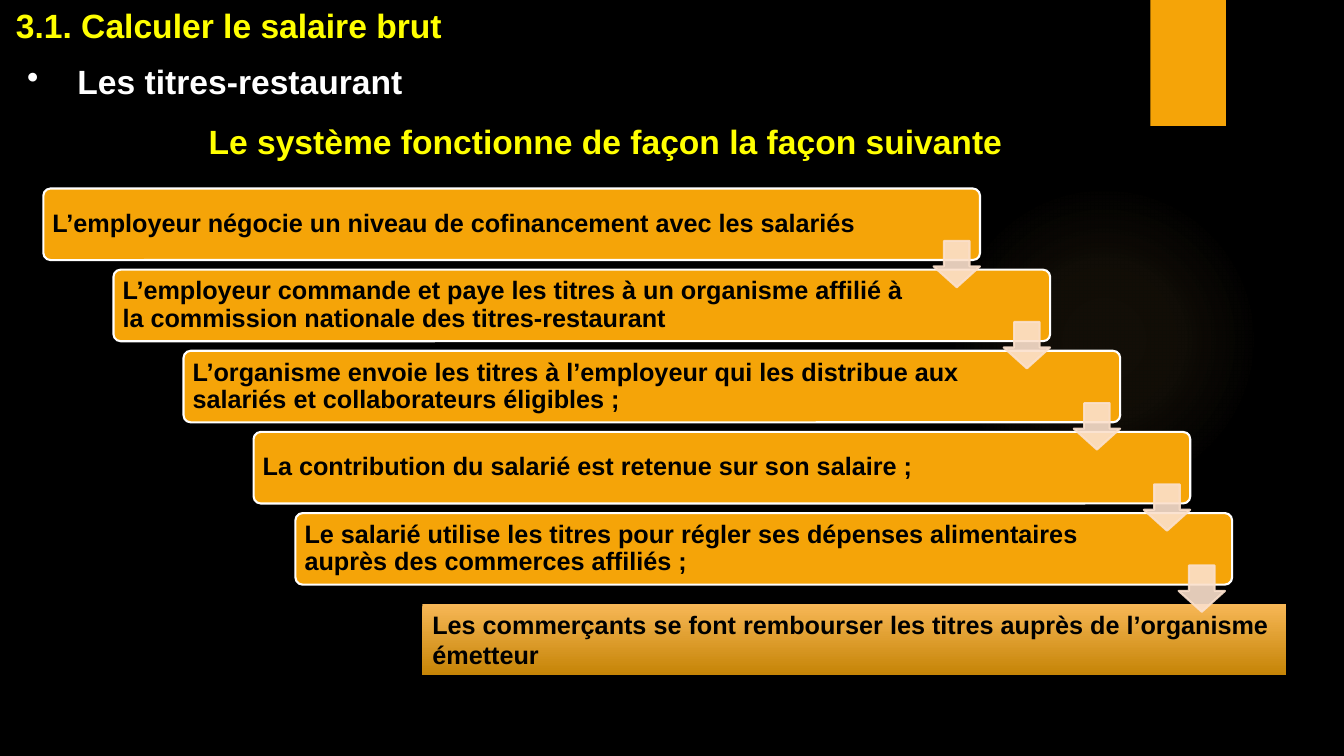
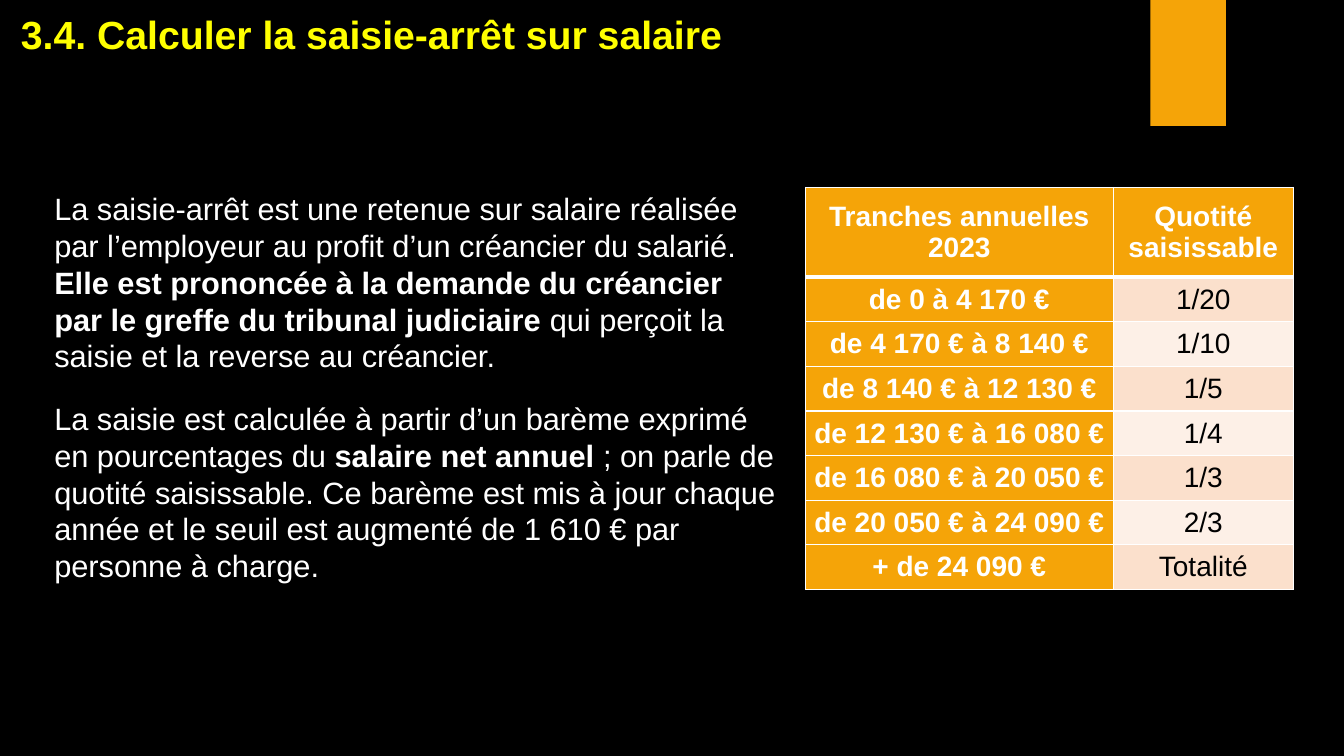
"""Build two payroll slides: meal voucher steps and the wage garnishment scale."""

from pptx import Presentation
from pptx.dml.color import RGBColor
from pptx.enum.shapes import MSO_SHAPE as Shape
from pptx.enum.text import MSO_ANCHOR as Anchor, PP_ALIGN as Align
from pptx.oxml import parse_xml
from pptx.oxml.ns import nsdecls, qn
from pptx.util import Inches, Pt

COLORS = {
    "background": "000000",
    "black": "000000",
    "white": "FFFFFF",
    "title": "FFFF00",
    "accent": "F5A408",
    "glow": "FAC96A",
    "pale": "FBE0CC",
    "paler": "FDF0E7",
    "gradient_top": "F7B756",
    "gradient_bottom": "C58406",
}
FONT = "Arial"

VOUCHER_TITLE = "3.1. Calculer le salaire brut"
VOUCHER_TOPIC = "Les titres-restaurant"
VOUCHER_HEADING = "Le système fonctionne de façon la façon suivante"
VOUCHER_STEPS = [
    ("L’employeur négocie un niveau de cofinancement avec les salariés", 0.88),
    ("L’employeur commande et paye les titres à un organisme affilié à "
     "la commission nationale des titres-restaurant", 1.23),
    ("L’organisme envoie les titres à l’employeur qui les distribue aux "
     "salariés et collaborateurs éligibles ;", 1.23),
    ("La contribution du salarié est retenue sur son salaire ;", 1.23),
    ("Le salarié utilise les titres pour régler ses dépenses "
     "alimentaires auprès des commerces affiliés ;", 1.23),
]
VOUCHER_END = "Les commerçants se font rembourser les titres auprès de l’organisme émetteur"

GARNISHMENT_TITLE = "3.4. Calculer la saisie-arrêt sur salaire"
GARNISHMENT_TEXT = [
    [("La saisie-arrêt est une retenue sur salaire réalisée par l’employeur "
      "au profit d’un créancier du salarié. ", False),
     ("Elle est prononcée à la demande du créancier par le greffe du "
      "tribunal judiciaire", True),
     (" qui perçoit la saisie et la reverse au créancier.", False)],
    [("La saisie est calculée à partir d’un barème exprimé en pourcentages du ", False),
     ("salaire net annuel ", True),
     ("; on parle de quotité saisissable. Ce barème est mis à jour chaque "
      "année et le seuil est augmenté de 1 610 € par personne à charge.", False)],
]
GARNISHMENT_SCALE = [
    ("Tranches annuelles\n2023", "Quotité\nsaisissable"),
    ("de 0 à 4 170 €", "1/20"),
    ("de 4 170 € à 8 140 €", "1/10"),
    ("de 8 140 € à 12 130 €", "1/5"),
    ("de 12 130 € à 16 080 €", "1/4"),
    ("de 16 080 € à 20 050 €", "1/3"),
    ("de 20 050 € à 24 090 €", "2/3"),
    ("+ de 24 090 €", "Totalité"),
]

STEP_LEFT, STEP_TOP = 0.43, 1.87
STEP_SHIFT, STEP_DROP = 0.695, 0.805
STEP_WIDTH, STEP_HEIGHT = 9.29, 0.71
LAST_STEP_LEFT, LAST_ARROW_RIGHT = 2.93, 12.15
ARROW_SIZE, ARROW_DROP = 0.46, 0.52
COLUMN_WIDTHS = (3.05, 1.79)
TABLE_HEIGHT, HEADER_HEIGHT = 3.99, 0.89


def rgb(name):
    return RGBColor.from_string(COLORS[name])


def box(left, top, width, height):
    return [Inches(value) for value in (left, top, width, height)]


def style(paragraph, size, color, bold=None):
    font = paragraph.font
    font.name, font.size, font.bold = FONT, Pt(size), bold
    font.color.rgb = rgb(color)


def write(shape, text, size, color):
    frame = shape.text_frame
    frame.word_wrap = True
    frame.text = text
    paragraph = frame.paragraphs[0]
    paragraph.alignment = Align.LEFT
    style(paragraph, size, color, True)
    return frame


def add_text(slide, area, text, size, color):
    return write(slide.shapes.add_textbox(*box(*area)), text, size, color)


def add_figure(slide, kind, area, fill=None, line=None):
    shape = slide.shapes.add_shape(kind, *box(*area))
    shape.shadow.inherit = False
    if fill:
        shape.fill.solid()
        shape.fill.fore_color.rgb = rgb(fill)
    if line:
        shape.line.color.rgb = rgb(line)
        shape.line.width = Pt(1.5)
    else:
        shape.line.fill.background()
    return shape


def add_glow(slide):
    glow = add_figure(slide, Shape.OVAL, (9.41, 1.83, 3.08, 3.08))
    stops = "".join(
        f'<a:gs pos="{position}000"><a:srgbClr val="{COLORS["glow"]}">'
        f'<a:alpha val="{opacity}000"/></a:srgbClr></a:gs>'
        for position, opacity in ((0, 7), (36, 6), (69, 0)))
    gradient = parse_xml(
        f'<a:gradFill {nsdecls("a")}><a:gsLst>{stops}</a:gsLst><a:path path="circle">'
        '<a:fillToRect l="50000" t="50000" r="50000" b="50000"/></a:path></a:gradFill>')
    glow.fill.background()
    properties = glow._element.spPr
    properties.replace(properties.find(qn("a:noFill")), gradient)


def add_slide(presentation, title, title_area, title_size):
    slide = presentation.slides.add_slide(presentation.slide_layouts[6])
    add_glow(slide)
    add_figure(slide, Shape.RECTANGLE, (11.41, 0, 0.75, 1.25), "accent")
    add_text(slide, title_area, title, title_size, "title")
    return slide


def add_step(slide, area, text, right_margin):
    step = add_figure(slide, Shape.ROUNDED_RECTANGLE, area, "accent", "white")
    step.adjustments[0] = 0.1
    frame = write(step, text, 18, "black")
    frame.vertical_anchor = Anchor.MIDDLE
    frame.margin_left = frame.margin_top = frame.margin_bottom = Inches(0.07)
    frame.margin_right = Inches(right_margin)
    frame.paragraphs[0].line_spacing = 0.9


def add_arrow(slide, left, top):
    area = (left, top, ARROW_SIZE, ARROW_SIZE)
    arrow = add_figure(slide, Shape.DOWN_ARROW, area, "pale", "pale")
    arrow.adjustments[0], arrow.adjustments[1] = 0.55, 0.45
    for color in arrow._element.spPr.iter(qn("a:srgbClr")):
        color.append(parse_xml(f'<a:alpha {nsdecls("a")} val="90000"/>'))


def add_topic(slide):
    paragraph = add_text(slide, (0.17, 0.56, 3.96, 0.5), VOUCHER_TOPIC, 24, "white").paragraphs[0]
    properties = paragraph._p.get_or_add_pPr()
    properties.set("marL", str(Inches(0.5)))
    properties.set("indent", str(-Inches(0.5)))
    properties.insert(0, parse_xml(f'<a:buChar {nsdecls("a")} char="•"/>'))


def add_voucher_slide(presentation):
    slide = add_slide(presentation, VOUCHER_TITLE, (0.06, 0, 8.27, 0.5), 24)
    add_topic(slide)
    add_text(slide, (1.97, 1.15, 10.79, 0.5), VOUCHER_HEADING, 24, "title")
    corners = [(min(STEP_LEFT + index * STEP_SHIFT, LAST_STEP_LEFT), STEP_TOP + index * STEP_DROP)
               for index in range(len(VOUCHER_STEPS))]
    for (left, top), (text, right_margin) in zip(corners, VOUCHER_STEPS):
        add_step(slide, (left, top, STEP_WIDTH, STEP_HEIGHT), text, right_margin)
    ending = add_figure(slide, Shape.RECTANGLE, (4.19, 5.99, 8.57, STEP_HEIGHT))
    ending.fill.gradient()
    ending.fill.gradient_angle = 270
    for stop, color in zip(ending.fill.gradient_stops, ("gradient_top", "gradient_bottom")):
        stop.color.rgb = rgb(color)
    write(ending, VOUCHER_END, 18, "black")
    for left, top in corners:
        right = min(left + STEP_WIDTH, LAST_ARROW_RIGHT)
        add_arrow(slide, right - ARROW_SIZE, top + ARROW_DROP)


def set_borders(cell, widths):
    properties = cell._tc.get_or_add_tcPr()
    for side, width in zip("LRTB", widths):
        properties.append(parse_xml(
            f'<a:ln{side} {nsdecls("a")} w="{Pt(width)}"><a:solidFill>'
            f'<a:srgbClr val="{COLORS["white"]}"/></a:solidFill></a:ln{side}>'))


def fill_cell(cell, text, row, column):
    heading = row == 0 or column == 0
    set_borders(cell, (1, 1, 3 if row == 1 else 1, 3 if row == 0 else 1))
    cell.fill.solid()
    cell.fill.fore_color.rgb = rgb("accent" if heading else "pale" if row % 2 else "paler")
    cell.vertical_anchor = Anchor.MIDDLE
    cell.margin_left = cell.margin_right = Inches(0.07)
    cell.margin_top = cell.margin_bottom = 0
    cell.text = text
    for paragraph in cell.text_frame.paragraphs:
        paragraph.alignment = Align.CENTER
        style(paragraph, 20, "white" if heading else "black", heading)


def add_scale(slide):
    area = box(7.99, 1.86, sum(COLUMN_WIDTHS), TABLE_HEIGHT)
    rows = len(GARNISHMENT_SCALE)
    table = slide.shapes.add_table(rows, len(COLUMN_WIDTHS), *area).table
    for column, width in zip(table.columns, COLUMN_WIDTHS):
        column.width = Inches(width)
    body_height = (TABLE_HEIGHT - HEADER_HEIGHT) / (rows - 1)
    for row, texts in enumerate(GARNISHMENT_SCALE):
        table.rows[row].height = Inches(body_height if row else HEADER_HEIGHT)
        for column, text in enumerate(texts):
            fill_cell(table.cell(row, column), text, row, column)


def add_garnishment_slide(presentation):
    slide = add_slide(presentation, GARNISHMENT_TITLE, (0.11, 0.05, 8.27, 0.57), 28)
    frame = slide.shapes.add_textbox(*box(0.44, 1.83, 7.37, 4.06)).text_frame
    frame.word_wrap = True
    for index, runs in enumerate(GARNISHMENT_TEXT):
        paragraph = frame.add_paragraph() if index else frame.paragraphs[0]
        if index:
            paragraph.space_before = Pt(18)
        style(paragraph, 22, "white")
        for text, bold in runs:
            run = paragraph.add_run()
            run.text, run.font.bold = text, bold
    add_scale(slide)


def main():
    presentation = Presentation()
    presentation.slide_width, presentation.slide_height = Inches(13.33), Inches(7.5)
    background = presentation.slide_master.background.fill
    background.solid()
    background.fore_color.rgb = rgb("background")
    add_voucher_slide(presentation)
    add_garnishment_slide(presentation)
    presentation.save("out.pptx")


if __name__ == "__main__":
    main()
